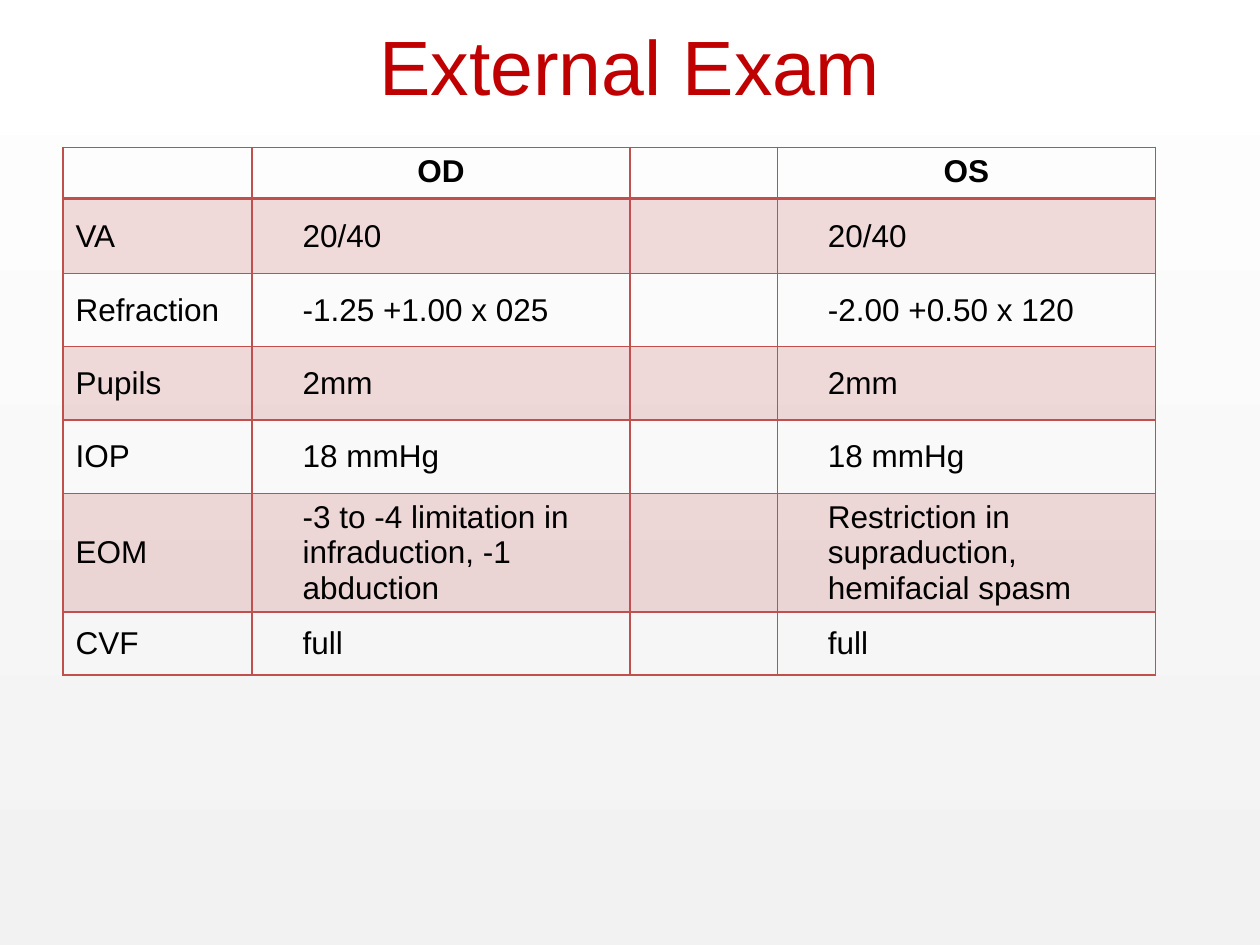
from dataclasses import dataclass

from lxml.etree import SubElement
from pptx import Presentation
from pptx.dml.color import RGBColor
from pptx.enum.shapes import MSO_SHAPE
from pptx.enum.text import MSO_ANCHOR, PP_ALIGN
from pptx.oxml.ns import qn
from pptx.util import Cm, Pt


@dataclass(frozen=True)
class Theme:
    font: str = "Arial"
    title_size: int = 44
    body_size: int = 18
    title_color: str = "C00000"
    text_color: str = "000000"
    accent: str = "C0504D"
    band_opacity: int = 20
    gradient: tuple = ("F2F2F2", "FFFFFF")


THEME = Theme()

ROWS = [
    ("", "OD", "", "OS"),
    ("VA", "20/40", "", "20/40"),
    ("Refraction", "-1.25 +1.00 x 025", "", "-2.00 +0.50 x 120"),
    ("Pupils", "2mm", "", "2mm"),
    ("IOP", "18 mmHg", "", "18 mmHg"),
    ("EOM", "-3 to -4 limitation in infraduction, -1 abduction", "",
     "Restriction in supraduction, hemifacial spasm"),
    ("CVF", "full", "", "full"),
]
COLUMN_WIDTHS = (3.81, 7.62, 2.97, 7.62)
ROW_HEIGHTS = (1.04, 1.5, 1.48, 1.48, 1.48, 2.38, 1.27)

CELL_FORMAT = {"vertical_anchor": MSO_ANCHOR.MIDDLE}
FINDING_FORMAT = {**CELL_FORMAT, "margin_left": Cm(1.02)}


def apply_format(target, values):
    for name, value in values.items():
        setattr(target, name, value)


def write_text(paragraph, text, size, color, bold=False):
    run = paragraph.add_run()
    run.text = text
    apply_format(run.font, {"name": THEME.font, "size": Pt(size), "bold": bold})
    run.font.color.rgb = RGBColor.from_string(color)


def add_backdrop(slide, width, height):
    shape = slide.shapes.add_shape(MSO_SHAPE.RECTANGLE, 0, 0, width, height)
    shape.shadow.inherit = False
    shape.line.fill.background()
    shape.fill.gradient()
    shape.fill.gradient_angle = 90
    for stop, color in zip(shape.fill.gradient_stops, THEME.gradient):
        stop.color.rgb = RGBColor.from_string(color)


def add_title(slide, text):
    shape = slide.shapes.add_textbox(Cm(1.27), Cm(-0.28), Cm(22.86), Cm(3.18))
    apply_format(shape.text_frame, {"word_wrap": True,
                                    "vertical_anchor": MSO_ANCHOR.MIDDLE})
    paragraph = shape.text_frame.paragraphs[0]
    paragraph.alignment = PP_ALIGN.CENTER
    write_text(paragraph, text, THEME.title_size, THEME.title_color)


def set_borders(cell, top, bottom):
    properties = cell._tc.get_or_add_tcPr()
    for side, width in {"L": 1, "R": 1, "T": top, "B": bottom}.items():
        line = SubElement(properties, qn(f"a:ln{side}"), w=str(Pt(width)))
        fill = SubElement(line, qn("a:solidFill"))
        SubElement(fill, qn("a:srgbClr"), val=THEME.accent)


def set_band(cell, shaded):
    if not shaded:
        cell.fill.background()
        return
    cell.fill.solid()
    cell.fill.fore_color.rgb = RGBColor.from_string(THEME.accent)
    color = cell._tc.tcPr.find(f"{qn('a:solidFill')}/{qn('a:srgbClr')}")
    SubElement(color, qn("a:alpha"), val=str(THEME.band_opacity * 1000))


def fill_cell(cell, text, row, column):
    is_header = row == 0
    # The rule under the header is twice as heavy as the others
    set_borders(cell, top=2 if row == 1 else 1, bottom=2 if is_header else 1)
    set_band(cell, shaded=row % 2 == 1)
    if not text:
        return
    paragraph = cell.text_frame.paragraphs[0]
    if is_header:
        paragraph.alignment = PP_ALIGN.CENTER
    else:
        apply_format(cell, FINDING_FORMAT if column else CELL_FORMAT)
    write_text(paragraph, text, THEME.body_size, THEME.text_color, is_header)


def add_exam_table(slide):
    frame = slide.shapes.add_table(
        len(ROWS), len(COLUMN_WIDTHS), Cm(1.27), Cm(2.97),
        Cm(sum(COLUMN_WIDTHS)), Cm(sum(ROW_HEIGHTS)))
    table = frame.table
    apply_format(table, {"first_row": False, "horz_banding": False})
    for column, width in zip(table.columns, COLUMN_WIDTHS):
        column.width = Cm(width)
    for row, height in zip(table.rows, ROW_HEIGHTS):
        row.height = Cm(height)
    for row, texts in enumerate(ROWS):
        for column, text in enumerate(texts):
            fill_cell(table.cell(row, column), text, row, column)


def main():
    presentation = Presentation()
    apply_format(presentation, {"slide_width": Cm(25.4), "slide_height": Cm(19.05)})
    slide = presentation.slides.add_slide(presentation.slide_layouts[6])

    # Soft grey backdrop, then the findings and the heading
    add_backdrop(slide, presentation.slide_width, presentation.slide_height)
    add_exam_table(slide)
    add_title(slide, "External Exam")
    presentation.save("out.pptx")


if __name__ == "__main__":
    main()
